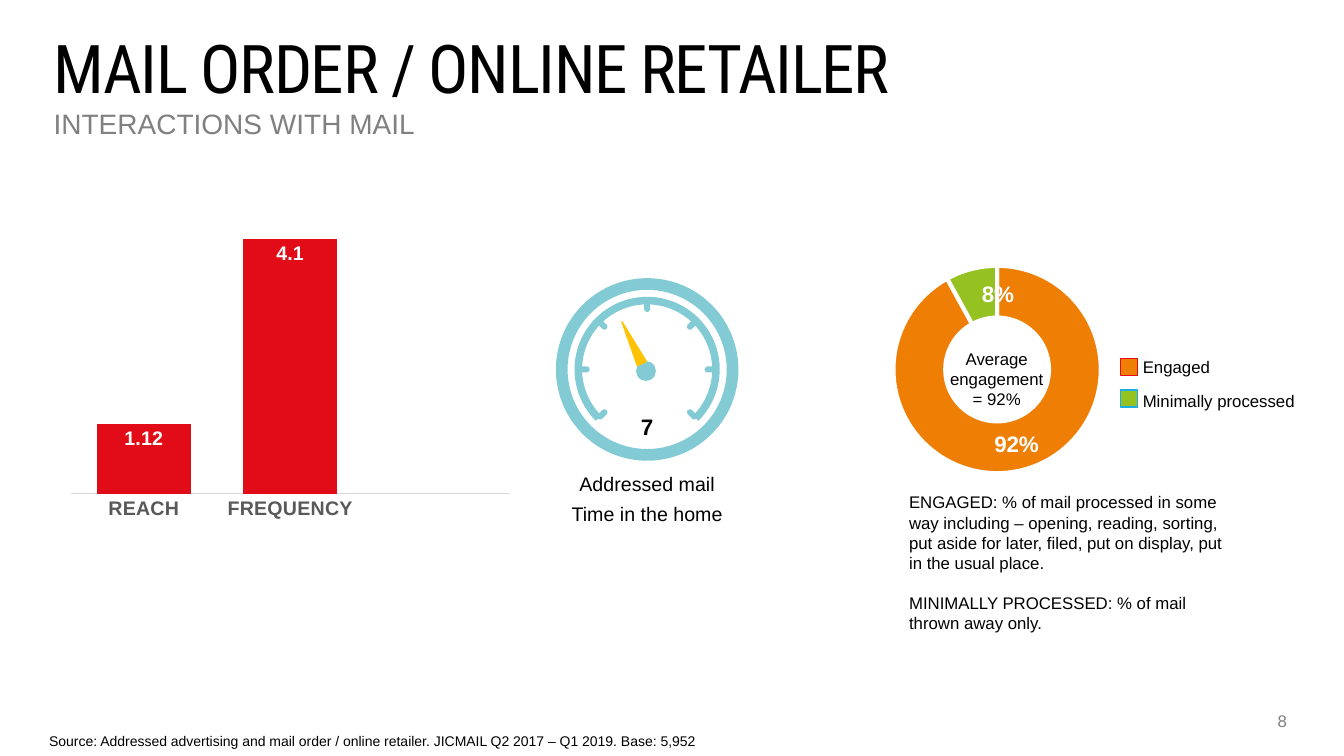
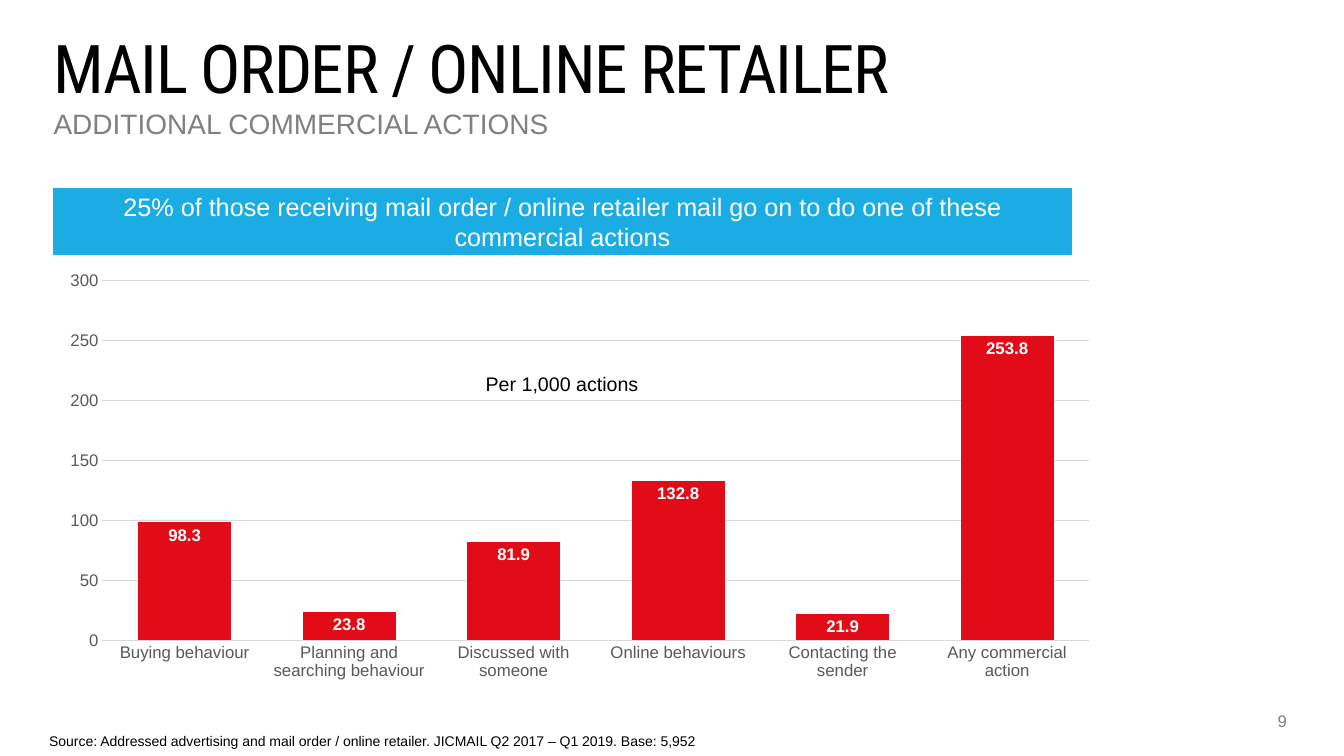
from math import cos, radians, sin

from lxml import etree
from pptx import Presentation
from pptx.chart.data import CategoryChartData
from pptx.dml.color import RGBColor
from pptx.enum.chart import XL_CHART_TYPE, XL_LABEL_POSITION, XL_TICK_MARK
from pptx.enum.shapes import MSO_SHAPE
from pptx.enum.text import MSO_ANCHOR, PP_ALIGN
from pptx.oxml.ns import qn
from pptx.util import Cm, Pt

BAR, RING = XL_CHART_TYPE.COLUMN_CLUSTERED, XL_CHART_TYPE.DOUGHNUT
IN_END, NO_TICK = XL_LABEL_POSITION.INSIDE_END, XL_TICK_MARK.NONE
RECT, OVAL, DONUT = MSO_SHAPE.RECTANGLE, MSO_SHAPE.OVAL, MSO_SHAPE.DONUT
ARC, PILL, WEDGE = MSO_SHAPE.BLOCK_ARC, MSO_SHAPE.ROUNDED_RECTANGLE, MSO_SHAPE.ISOSCELES_TRIANGLE
LEFT, MID, RIGHT = PP_ALIGN.LEFT, PP_ALIGN.CENTER, PP_ALIGN.RIGHT

BLACK = RGBColor(0x00, 0x00, 0x00)
WHITE = RGBColor(0xFF, 0xFF, 0xFF)
GREY = RGBColor(0x80, 0x80, 0x80)
SLATE = RGBColor(0x59, 0x59, 0x59)
PALE = RGBColor(0xD9, 0xD9, 0xD9)
RED = RGBColor(0xE2, 0x0C, 0x18)
BLUE = RGBColor(0x1B, 0xAC, 0xE4)
AQUA = RGBColor(0x82, 0xCB, 0xD4)
AMBER = RGBColor(0xFD, 0xC3, 0x04)
ORANGE = RGBColor(0xEF, 0x7E, 0x05)
GREEN = RGBColor(0x95, 0xC1, 0x21)

# Content
TITLE = "MAIL ORDER / ONLINE RETAILER"
SOURCE = ("Source: Addressed advertising and mail order / online retailer. "
          "JICMAIL Q2 2017 – Q1 2019. Base: 5,952")
VISITS = [("REACH", 1.12), ("FREQUENCY", 4.1), ("", None)]
SHARES = [("1", 0.92), ("2", 0.08)]
KEYS = [("Engaged", ORANGE, RED), ("Minimally processed", GREEN, BLUE)]
HOME = ["Addressed mail", "Time in the home"]
TERMS = [
    "ENGAGED: % of mail processed in some way including – opening, reading, sorting, "
    "put aside for later, filed, put on display, put in the usual place.",
    "MINIMALLY PROCESSED: % of mail thrown away only.",
]
BANNER = ("25% of those receiving mail order / online retailer mail go on to do "
          "one of these commercial actions")
ACTIONS = [
    ("Buying behaviour", 98.3),
    ("Planning and searching behaviour", 23.8),
    ("Discussed with someone", 81.9),
    ("Online behaviours", 132.8),
    ("Contacting the sender", 21.9),
    ("Any commercial action", 253.8),
]

# Text formats
HEAD = {"name": "Roboto Condensed", "size": Pt(48)}
SUB = {"size": Pt(20), "ink": GREY}
PAGE = {"size": Pt(12), "ink": GREY}
NOTE = {"size": Pt(10)}
SMALL = {"size": Pt(12)}
BODY = {"size": Pt(14)}
SCORE = {"size": Pt(16), "bold": True}
CALL = {"size": Pt(18), "ink": WHITE}


def style(font, fmt):
    for key, val in ({"name": "Arial", "ink": BLACK} | fmt).items():
        if key == "ink":
            font.color.rgb = val
        else:
            setattr(font, key, val)


def write(frame, lines, fmt, align=LEFT, gap=0):
    frame.word_wrap = True
    for num, line in enumerate(lines):
        para = frame.paragraphs[0] if num == 0 else frame.add_paragraph()
        para.alignment = align
        if num:
            para.space_before = Pt(gap)
        run = para.add_run()
        run.text = line
        style(run.font, fmt)


def label(slide, lines, box, fmt, align=LEFT, pad=True, gap=0):
    frame = slide.shapes.add_textbox(*map(Cm, box)).text_frame
    if not pad:
        for side in ("left", "top", "right", "bottom"):
            setattr(frame, "margin_" + side, 0)
    write(frame, lines, fmt, align, gap)
    return frame


def shape(shapes, kind, box, fill, line=None):
    item = shapes.add_shape(kind, *map(Cm, box))
    item.shadow.inherit = False
    item.fill.solid()
    item.fill.fore_color.rgb = fill
    if line is None:
        item.line.fill.background()
    else:
        item.line.color.rgb = line
        item.line.width = Pt(1)
    return item


def disc(shapes, kind, x, y, rad, fill):
    return shape(shapes, kind, (x - rad, y - rad, 2 * rad, 2 * rad), fill)


def start(prs, sub, page):
    slide = prs.slides.add_slide(prs.slide_layouts[6])
    frame = label(slide, [TITLE], (1.35, 1.14, 30.99, 1.32), HEAD, pad=False)
    para = frame.paragraphs[0]
    para.line_spacing = Pt(44)
    para.runs[0].font._element.set("spc", "-100")
    frame = label(slide, [sub], (1.35, 2.77, 31.06, 0.74), SUB, pad=False)
    frame.paragraphs[0].line_spacing = 0.9
    label(slide, [page], (31.24, 17.91, 1.19, 0.51), PAGE, RIGHT, pad=False)
    label(slide, [SOURCE], (0.99, 18.34, 18, 0.69), NOTE)
    return slide


# Charts
def graph(slide, kind, rows, box):
    data = CategoryChartData()
    data.categories = [name for name, _ in rows]
    data.add_series("Series 1", [val for _, val in rows])
    chart = slide.shapes.add_chart(kind, *map(Cm, box), data).chart
    chart.has_title = chart.has_legend = False
    style(chart.font, NOTE)
    return chart


def marks(ser, size):
    tags = ser.data_labels
    tags.show_value = True
    style(tags.font, {"size": Pt(size), "bold": True, "ink": WHITE})
    return tags


def bars(slide, rows, box, top, gap, size, tag, bold=False, lap=0, grid=False):
    chart = graph(slide, BAR, rows, box)
    plot = chart.plots[0]
    plot.gap_width, plot.overlap, plot.vary_by_categories = gap, lap, False
    ser = plot.series[0]
    ser.format.fill.solid()
    ser.format.fill.fore_color.rgb = RED
    marks(ser, tag).position = IN_END
    cat, val = chart.category_axis, chart.value_axis
    for axis in (cat, val):
        axis.major_tick_mark = NO_TICK
        style(axis.tick_labels.font, {"size": Pt(size), "bold": bold, "ink": SLATE})
    lines = [cat.format.line]
    val.minimum_scale, val.maximum_scale = 0, top
    val.has_major_gridlines = val.visible = grid
    if grid:
        val.format.line.fill.background()
        lines.append(val.major_gridlines.format.line)
    for line in lines:
        line.color.rgb = PALE
        line.width = Pt(0.75)


def layout(host, spot, **vals):
    for old in host.findall(qn("c:layout")):
        host.remove(old)
    node = etree.Element(qn("c:layout"))
    man = etree.SubElement(node, qn("c:manualLayout"))
    for key, val in vals.items():
        etree.SubElement(man, qn("c:" + key), val=str(val))
    host.insert(spot, node)


def ring(slide, rows, box):
    chart = graph(slide, RING, rows, box)
    ser = chart.plots[0].series[0]
    tags = marks(ser, 16)
    tags.number_format, tags.number_format_is_linked = "0%", False
    for num, (_, fill, _) in enumerate(KEYS):
        form = ser.points[num].format
        form.fill.solid()
        form.fill.fore_color.rgb = fill
        form.line.color.rgb = WHITE
        form.line.width = Pt(3)
    layout(chart.element.find(".//" + qn("c:plotArea")), 0, layoutTarget="inner",
           xMode="edge", yMode="edge", x=0.19, y=0.06, w=0.62, h=0.83)
    # Nudge the label of the small slice to the right
    style(ser.points[1].data_label.font, SCORE | {"ink": WHITE})
    tag = chart.element.find(".//" + qn("c:dLbl"))
    layout(tag, 1, x=0.06, y=0)
    tag.insert(2, etree.Element(qn("c:numFmt"), formatCode="0%", sourceLinked="0"))


def gauge(slide, x, y):
    shapes = slide.shapes.add_group_shape().shapes
    disc(shapes, DONUT, x, y, 2.3, AQUA).adjustments[0] = 0.064
    arc = disc(shapes, ARC, x, y, 1.83, AQUA)
    for num, val in enumerate((81, 27, 0.052)):  # 135 to 45 degrees, thickness
        arc.adjustments[num] = val
    long, thick, rad = 0.3, 0.15, 1.6
    for turn in range(135, 406, 45):
        px, py = x + rad * cos(radians(turn)), y + rad * sin(radians(turn))
        tick = shape(shapes, PILL, (px - long / 2, py - thick / 2, long, thick), AQUA)
        tick.adjustments[0] = 0.5
        tick.rotation = turn % 360
    disc(shapes, OVAL, x - 0.03, y + 0.04, 0.25, AQUA)
    shape(shapes, WEDGE, (15.8, 8.05, 0.25, 1.17), AMBER, AMBER).rotation = 334.6


def mail(prs):
    slide = start(prs, "INTERACTIONS WITH MAIL", "8")
    bars(slide, VISITS, (1.55, 5.23, 11.53, 8.03), 4.5, 55, 14, 14, bold=True)
    # Time in the home
    mid = 16.31
    gauge(slide, mid, 9.31)
    label(slide, ["7"], (mid - 0.5, 10.29, 1, 0.94), SCORE, MID)
    for num, line in enumerate(HOME):
        label(slide, [line], (mid - 2.5, 11.76 + 0.76 * num, 5, 0.86), BODY, MID)
    # Engagement
    ring(slide, SHARES, (20.9, 6.32, 8.46, 6.3))
    for num, (name, fill, line) in enumerate(KEYS):
        shape(slide.shapes, RECT, (28.24, 9.04 + 0.79 * num, 0.43, 0.43), fill, line)
        label(slide, [name], (28.55, 8.86 + 0.86 * num, 4.8, 0.76), SMALL)
    label(slide, TERMS, (22.91, 12.4, 8.33, 2.06), SMALL, pad=False, gap=14)
    label(slide, ["Average engagement = 92%"], (23.57, 8.66, 3.1, 1.8), SMALL, MID)


def trade(prs):
    slide = start(prs, "ADDITIONAL COMMERCIAL ACTIONS", "9")
    bars(slide, ACTIONS, (1.24, 6.63, 26.75, 10.72), 300, 77, 12, 12, lap=-27, grid=True)
    band = shape(slide.shapes, RECT, (1.35, 4.75, 25.65, 1.65), BLUE, BLUE)
    band.text_frame.vertical_anchor = MSO_ANCHOR.MIDDLE
    write(band.text_frame, [BANNER], CALL, MID)
    label(slide, ["Per 1,000 actions"], (11.99, 9.25, 4.6, 0.86), BODY)


def main():
    prs = Presentation()
    prs.slide_width, prs.slide_height = Cm(33.87), Cm(19.05)
    mail(prs)
    trade(prs)
    prs.save("out.pptx")


if __name__ == "__main__":
    main()
